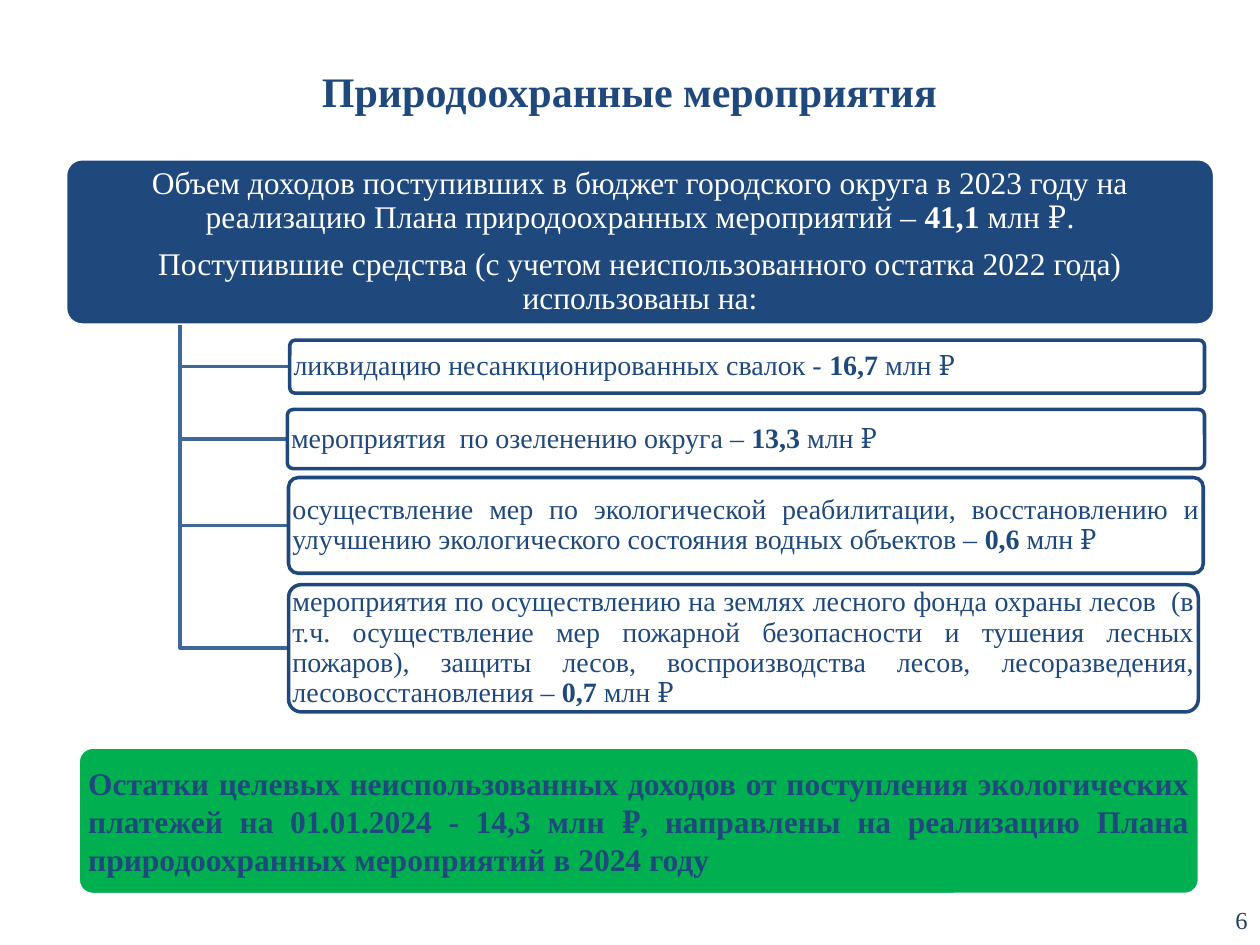
"""Build the slide on spending for environmental protection measures."""
from pptx import Presentation
from pptx.dml.color import RGBColor
from pptx.enum import shapes, text
from pptx.util import Inches, Pt

COLORS = {"navy": "1F497D", "branch": "3F6797", "number": "254061",
          "green": "00B050", "white": "FFFFFF"}
ALIGN = text.PP_ALIGN
TRUNK_X, TRUNK_TOP = 1.43, 2.58
ROUNDING = 0.1
CORNER_INSET = ROUNDING * 0.29


def add_runs(frame, paragraphs, size, color, align, spacing=1.0):
    frame.word_wrap = True
    frame.vertical_anchor = text.MSO_ANCHOR.MIDDLE
    for index, runs in enumerate(paragraphs):
        paragraph = frame.add_paragraph() if index else frame.paragraphs[0]
        paragraph.alignment = align
        paragraph.line_spacing = spacing
        paragraph.space_after = Pt(7 if index < len(paragraphs) - 1 else 0)
        for wording, bold in runs:
            run = paragraph.add_run()
            run.text = wording
            run.font.name = "Times New Roman"
            run.font.size = Pt(size)
            run.font.bold = bold
            run.font.color.rgb = RGBColor.from_string(COLORS[color])


def add_panel(place, fill, line, margin):
    panel = slide.shapes.add_shape(
        shapes.MSO_SHAPE.ROUNDED_RECTANGLE, *map(Inches, place))
    panel.shadow.inherit = False
    panel.adjustments[0] = ROUNDING
    panel.fill.solid()
    panel.fill.fore_color.rgb = RGBColor.from_string(COLORS[fill])
    panel.line.color.rgb = RGBColor.from_string(COLORS[line])
    panel.line.width = Pt(2)
    frame = panel.text_frame
    frame.margin_left = frame.margin_right = Inches(
        max(0, margin - CORNER_INSET * place[3]))
    frame.margin_top = frame.margin_bottom = 0
    return frame


prs = Presentation()
prs.slide_width, prs.slide_height = Inches(10), Inches(7.5)
slide = prs.slides.add_slide(prs.slide_layouts[6])

captions = [
    ((9.61, 7.1, 0.39, 0.4), "6", False, 14, "number", ALIGN.RIGHT),
    ((0.62, 0.47, 8.75, 0.5), "Природоохранные мероприятия", True, 24, "navy", ALIGN.CENTER),
]
for place, wording, bold, size, color, align in captions:
    caption = slide.shapes.add_textbox(*map(Inches, place))
    add_runs(caption.text_frame, [[(wording, bold)]], size, color, align)

income = add_panel((0.52, 1.26, 9.12, 1.32), "navy", "white", 0.04)
add_runs(income, [
    [("Объем доходов поступивших в бюджет городского округа в 2023 году на "
      "реализацию Плана природоохранных мероприятий – ", False),
     ("41,1 ", True), ("млн ₽.", False)],
    [("Поступившие средства (с учетом неиспользованного остатка 2022 года) "
      "использованы на:", False)],
], 18, "white", ALIGN.CENTER, 0.9)

measures = [
    ((2.3, 2.7, 7.26, 0.42), ALIGN.LEFT,
     "ликвидацию несанкционированных свалок - ", "16,7 "),
    ((2.28, 3.25, 7.28, 0.47), ALIGN.LEFT,
     "мероприятия  по озеленению округа – ", "13,3 "),
    ((2.29, 3.79, 7.26, 0.76), ALIGN.JUSTIFY,
     "осуществление мер по экологической реабилитации, восстановлению и "
     "улучшению экологического состояния водных объектов – ", "0,6 "),
    ((2.29, 4.64, 7.22, 1.01), ALIGN.JUSTIFY,
     "мероприятия по осуществлению на землях лесного фонда охраны лесов  (в т.ч. "
     "осуществление мер пожарной безопасности и тушения лесных пожаров), защиты "
     "лесов, воспроизводства лесов, лесоразведения, лесовосстановления – ", "0,7 "),
]
for place, align, measure, amount in measures:
    left, top, width, height = place
    middle = top + height / 2
    outline = slide.shapes.build_freeform(Inches(TRUNK_X), Inches(TRUNK_TOP))
    outline.add_line_segments(
        [(Inches(TRUNK_X), Inches(middle)), (Inches(left), Inches(middle))], close=False)
    branch = outline.convert_to_shape()
    branch.shadow.inherit = False
    branch.fill.background()
    branch.line.color.rgb = RGBColor.from_string(COLORS["branch"])
    branch.line.width = Pt(2)
    spending = add_panel(place, "white", "navy", 0.03)
    add_runs(spending, [[(measure, False), (amount, True), ("млн ₽", False)]],
             16, "navy", align, 0.9)

remainder = add_panel((0.62, 5.93, 8.9, 1.17), "green", "white", 0.08)
add_runs(remainder, [[
    ("Остатки целевых неиспользованных доходов от поступления экологических "
     "платежей на 01.01.2024 - 14,3 млн ₽, направлены на реализацию Плана "
     "природоохранных мероприятий в 2024 году", True)]], 18, "navy", ALIGN.JUSTIFY)

prs.save("out.pptx")
